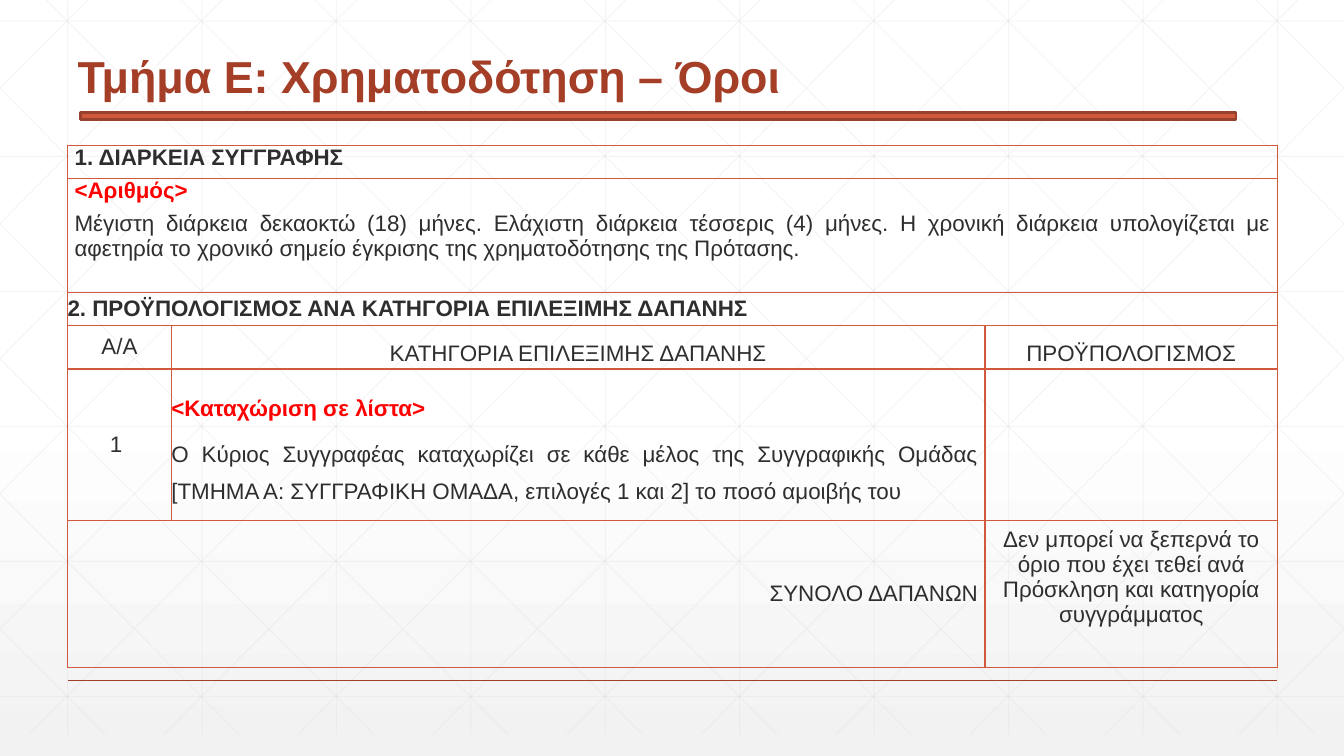
from lxml import etree
from pptx import Presentation
from pptx.dml.color import RGBColor
from pptx.enum.shapes import MSO_CONNECTOR, MSO_SHAPE
from pptx.enum.text import MSO_ANCHOR, PP_ALIGN
from pptx.oxml.ns import qn
from pptx.util import Inches, Pt

STRAIGHT = MSO_CONNECTOR.STRAIGHT
RECTANGLE = MSO_SHAPE.RECTANGLE
TOP, MIDDLE = MSO_ANCHOR.TOP, MSO_ANCHOR.MIDDLE
LEFT, CENTER, RIGHT, JUSTIFY = PP_ALIGN.LEFT, PP_ALIGN.CENTER, PP_ALIGN.RIGHT, PP_ALIGN.JUSTIFY

COLORS = {
    "white": "FFFFFF", "mist": "F2F2F2", "grid": "D8D8D8", "text": "2D2E2D",
    "prompt": "FF0000", "title": "A43E27", "accent": "D15A3E", "accent_edge": "98412D",
}
FONT = "Arial"
WIDTH, HEIGHT = 13.33, 7.5
GRID_BOTTOM = 7.29
GRID_STEP = 4 / 3
DIAGONAL_START, DIAGONAL_RUN = 0.46, 7.25
COLUMN_WIDTHS = (1.03, 8.07, 2.9)
ROW_HEIGHTS = (0.33, 1.13, 0.33, 0.43, 1.5, 1.46)
MERGES = ((0, 0, 2), (1, 0, 2), (2, 0, 2), (5, 0, 1))
INSET = 0.07


def color(name):
    return RGBColor.from_string(COLORS[name])


def set_background(slide):
    fill = slide.background.fill
    fill.gradient()
    fill.gradient_angle = 270
    for stop, position, name in zip(fill.gradient_stops, (0.53, 1), ("white", "mist")):
        stop.position = position
        stop.color.rgb = color(name)


def add_line(slide, start, end, name, width, opacity=None):
    line = slide.shapes.add_connector(STRAIGHT, *(Inches(value) for value in (*start, *end)))
    line.line.color.rgb = color(name)
    line.line.width = Pt(width)
    properties = line.element.spPr
    if opacity is not None:
        alpha = etree.SubElement(next(properties.iter(qn("a:srgbClr"))), qn("a:alpha"))
        alpha.set("val", str(opacity * 1000))
    etree.SubElement(properties, qn("a:effectLst"))


def add_grid_line(slide, start, end):
    add_line(slide, start, end, "grid", 0.75, 24)


def add_grid(slide):
    for index in range(10):
        x = 0.67 + index * GRID_STEP
        add_grid_line(slide, (x, 0), (x, GRID_BOTTOM))
    for index in range(6):
        y = 0.21 + index * 1.34
        add_grid_line(slide, (0, y), (WIDTH, y))
    slope = GRID_BOTTOM / DIAGONAL_RUN
    for index in range(-5, 10):
        x = DIAGONAL_START + index * GRID_STEP
        left, right = max(x, 0), min(x + DIAGONAL_RUN, WIDTH)
        top, bottom = (left - x) * slope, (right - x) * slope
        add_grid_line(slide, (left, top), (right, bottom))
        add_grid_line(slide, (WIDTH - left, top), (WIDTH - right, bottom))


def add_title_bar(slide):
    bar = slide.shapes.add_shape(RECTANGLE, Inches(0.8), Inches(1.12), Inches(11.46), Inches(0.07))
    bar.shadow.inherit = False
    bar.fill.solid()
    bar.fill.fore_color.rgb = color("accent")
    bar.line.color.rgb = color("accent_edge")
    bar.line.width = Pt(2)


def format_paragraph(paragraph, text, size, name, bold, align, spacing=None):
    paragraph.text = text
    paragraph.alignment = align
    paragraph.line_spacing = spacing
    font = paragraph.font
    font.name, font.size, font.bold = FONT, Pt(size), bold
    font.color.rgb = color(name)


def set_title(slide, text):
    title = slide.shapes.title
    title.left, title.top, title.width, title.height = (
        Inches(value) for value in (0.67, 0.23, 12, 1.11))
    title.text_frame.vertical_anchor = MIDDLE
    format_paragraph(title.text_frame.paragraphs[0], text, 32, "title", True, LEFT, 0.9)
    title.element.getparent().append(title.element)


def set_borders(cell):
    properties = cell._tc.get_or_add_tcPr()
    for index, side in enumerate(("lnL", "lnR", "lnT", "lnB")):
        border = etree.Element(qn(f"a:{side}"), w=str(Pt(1)))
        fill = etree.SubElement(border, qn("a:solidFill"))
        etree.SubElement(fill, qn("a:srgbClr"), val=COLORS["accent"])
        properties.insert(index, border)


def add_table(slide):
    frame = slide.shapes.add_table(
        len(ROW_HEIGHTS), len(COLUMN_WIDTHS),
        Inches(0.67), Inches(1.44), Inches(12), Inches(5.18))
    table = frame.table
    table.first_row = table.horz_banding = False
    for column, width in zip(table.columns, COLUMN_WIDTHS):
        column.width = Inches(width)
    for row, height in zip(table.rows, ROW_HEIGHTS):
        row.height = Inches(height)
    for cell in table.iter_cells():
        cell.margin_left = cell.margin_right = cell.margin_top = cell.margin_bottom = 0
        cell.fill.background()
        set_borders(cell)
    for row, first, last in MERGES:
        table.cell(row, first).merge(table.cell(row, last))
    return table


def fill_cell(cell, paragraphs, align, anchor=MIDDLE, left=0, right=0, bottom=0, spacing=None):
    cell.vertical_anchor = anchor
    cell.margin_left, cell.margin_right = Inches(left), Inches(right)
    cell.margin_bottom = Inches(bottom)
    for index, (text, name, bold) in enumerate(paragraphs):
        if index:
            paragraph = cell.text_frame.add_paragraph()
            paragraph.space_before = Pt(6)
        else:
            paragraph = cell.text_frame.paragraphs[0]
        format_paragraph(paragraph, text, 16, name, bold, align, spacing)


def plain(text):
    return [(text, "text", False)]


def heading(text):
    return [(text, "text", True)]


def prompted(prompt, text):
    return [(prompt, "prompt", True), *plain(text)]


def fill_table(table):
    fill_cell(table.cell(0, 0), heading("1. ΔΙΑΡΚΕΙΑ ΣΥΓΓΡΑΦΗΣ"), LEFT, TOP, INSET, INSET)
    duration = prompted(
        "<Αριθμός>",
        "Μέγιστη διάρκεια δεκαοκτώ (18) μήνες. Ελάχιστη διάρκεια τέσσερις (4) μήνες. "
        "Η χρονική διάρκεια υπολογίζεται με αφετηρία το χρονικό σημείο έγκρισης της "
        "χρηματοδότησης της Πρότασης.")
    fill_cell(table.cell(1, 0), duration, JUSTIFY, TOP, INSET, INSET)
    fill_cell(table.cell(2, 0),
              heading("2. ΠΡΟΫΠΟΛΟΓΙΣΜΟΣ ΑΝΑ ΚΑΤΗΓΟΡΙΑ ΕΠΙΛΕΞΙΜΗΣ ΔΑΠΑΝΗΣ"), JUSTIFY)
    fill_cell(table.cell(3, 0), plain("Α/Α"), CENTER)
    fill_cell(table.cell(3, 1), plain("ΚΑΤΗΓΟΡΙΑ ΕΠΙΛΕΞΙΜΗΣ ΔΑΠΑΝΗΣ"), CENTER, spacing=1.5)
    fill_cell(table.cell(3, 2), plain("ΠΡΟΫΠΟΛΟΓΙΣΜΟΣ"), CENTER, spacing=1.5)
    fill_cell(table.cell(4, 0), plain("1"), CENTER, right=INSET)
    fees = prompted(
        "<Καταχώριση σε λίστα>",
        "Ο Κύριος Συγγραφέας καταχωρίζει σε κάθε μέλος της Συγγραφικής Ομάδας "
        "[ΤΜΗΜΑ Α: ΣΥΓΓΡΑΦΙΚΗ ΟΜΑΔΑ, επιλογές 1 και 2] το ποσό αμοιβής του")
    fill_cell(table.cell(4, 1), fees, JUSTIFY, right=INSET, spacing=1.5)
    fill_cell(table.cell(5, 0), plain("ΣΥΝΟΛΟ ΔΑΠΑΝΩΝ"), RIGHT, right=INSET)
    limit = plain("Δεν μπορεί να ξεπερνά το όριο που έχει τεθεί ανά "
                  "Πρόσκληση και κατηγορία συγγράμματος")
    fill_cell(table.cell(5, 2), limit, CENTER, left=INSET, right=INSET, bottom=0.33)


def main():
    """Build the funding terms slide."""
    presentation = Presentation()
    presentation.slide_width, presentation.slide_height = Inches(WIDTH), Inches(HEIGHT)
    slide = presentation.slides.add_slide(presentation.slide_layouts[5])
    set_background(slide)
    add_grid(slide)
    add_line(slide, (0.67, 6.75), (12.67, 6.75), "title", 1)
    add_title_bar(slide)
    set_title(slide, "Τμήμα Ε: Χρηματοδότηση – Όροι")
    fill_table(add_table(slide))
    presentation.save("out.pptx")


if __name__ == "__main__":
    main()
